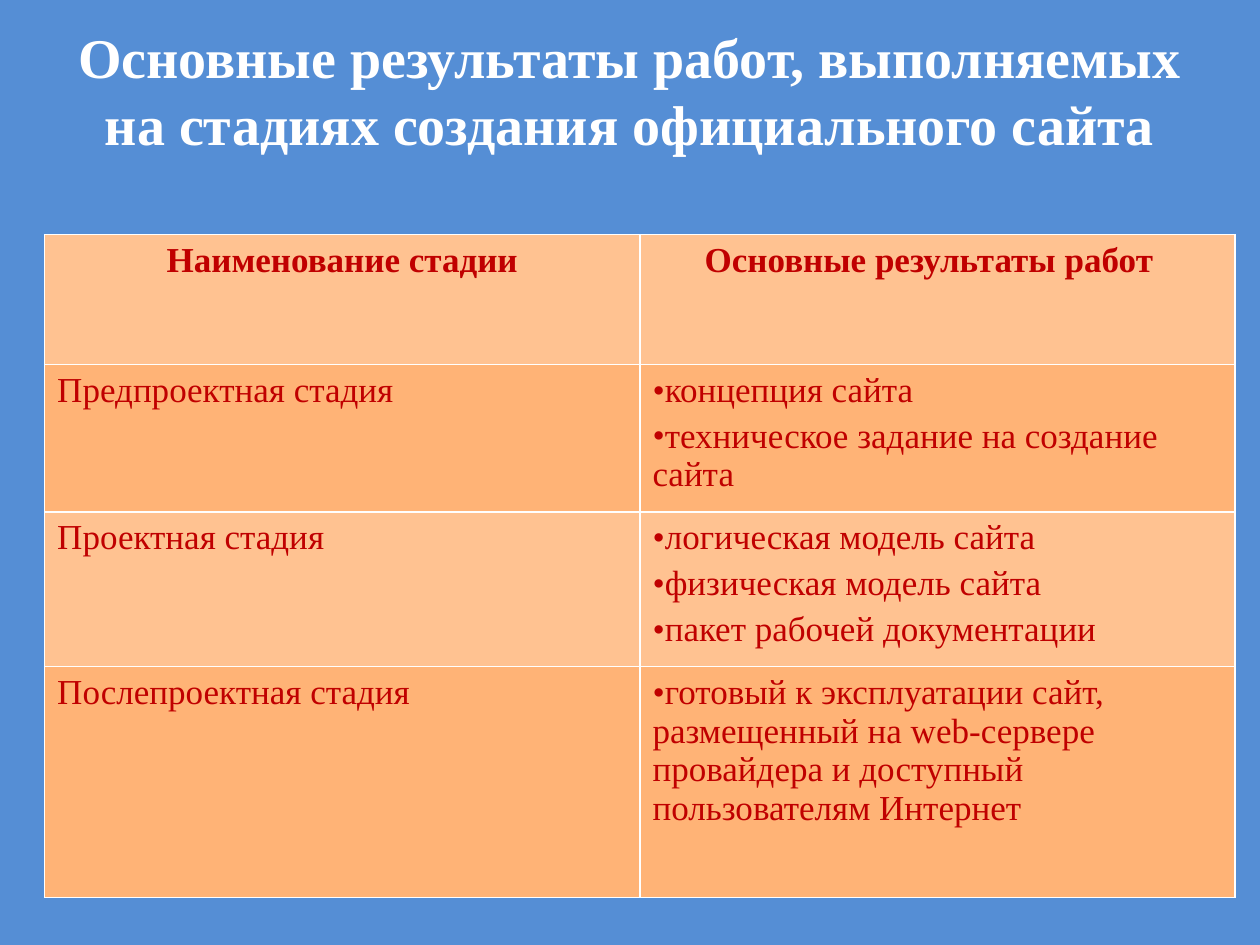
from lxml import etree
from pptx import Presentation
from pptx.dml.color import RGBColor
from pptx.enum.text import MSO_ANCHOR, MSO_AUTO_SIZE, PP_ALIGN
from pptx.oxml.ns import qn
from pptx.util import Cm, Pt

CENTER, LEFT = PP_ALIGN.CENTER, PP_ALIGN.LEFT
MIDDLE = MSO_ANCHOR.MIDDLE
NO_AUTOFIT = MSO_AUTO_SIZE.NONE
TITLE_ONLY = 5

# Content
TITLE = "Основные результаты работ, выполняемых на стадиях создания официального сайта"
HEADERS = ["Наименование стадии", "Основные результаты работ"]
STAGES = [
    ("Предпроектная стадия", [
        "концепция сайта",
        "техническое задание на создание сайта",
    ]),
    ("Проектная стадия", [
        "логическая модель сайта",
        "физическая модель сайта",
        "пакет рабочей документации",
    ]),
    ("Послепроектная стадия", [
        "готовый к эксплуатации сайт, размещенный на web-сервере "
        "провайдера и доступный пользователям Интернет",
    ]),
]

# Look and layout (lengths in cm)
FONT = "Times New Roman"
THEME = {
    "background": "558ED5",
    "bands": ("FFC291", "FFB376"),
    "border": "FFFFFF",
    "title": {"name": FONT, "size": Pt(32), "bold": True, "color": "FFFFFF"},
    "header": {"name": FONT, "size": Pt(20), "bold": True, "color": "C00000"},
    "body": {"name": FONT, "size": Pt(20), "bold": False, "color": "C00000"},
}
TITLE_BOX = {"left": 1.27, "top": 0.22, "width": 22.86, "height": 3.18}
TABLE_LEFT, TABLE_TOP = 0.9, 4.73
COLUMN_WIDTH = 12
ROW_HEIGHTS = [2.62, 2.97, 3.12, 4.65]
HEADER_RIGHT_MARGIN = 0.6


def write_paragraph(paragraph, text, style, alignment, space_before):
    paragraph.alignment = alignment
    paragraph.space_before = space_before
    run = paragraph.add_run()
    run.text = text
    for name, value in THEME[style].items():
        if name == "color":
            run.font.color.rgb = RGBColor.from_string(value)
        else:
            setattr(run.font, name, value)


def add_bullet(paragraph):
    properties = paragraph._p.get_or_add_pPr()
    properties.set("marL", "0")
    properties.set("indent", "0")
    etree.SubElement(properties, qn("a:buFont"), typeface=FONT)
    etree.SubElement(properties, qn("a:buChar"), char="•")


def add_borders(cell):
    properties = cell._tc.get_or_add_tcPr()
    for position, side in enumerate(("a:lnL", "a:lnR", "a:lnT", "a:lnB")):
        line = etree.Element(qn(side), w=str(Pt(1)))
        fill = etree.SubElement(line, qn("a:solidFill"))
        etree.SubElement(fill, qn("a:srgbClr"), val=THEME["border"])
        properties.insert(position, line)


def fill_cell(cell, lines, style, alignment, bulleted):
    frame = cell.text_frame
    for index, text in enumerate(lines):
        paragraph = frame.add_paragraph() if index else frame.paragraphs[0]
        write_paragraph(paragraph, text, style, alignment, Pt(4))
        if bulleted:
            add_bullet(paragraph)


def add_title(slide):
    title = slide.shapes.title
    for name, value in TITLE_BOX.items():
        setattr(title, name, Cm(value))
    frame = title.text_frame
    for name, value in {"word_wrap": True, "auto_size": NO_AUTOFIT,
                        "vertical_anchor": MIDDLE}.items():
        setattr(frame, name, value)
    write_paragraph(frame.paragraphs[0], TITLE, "title", CENTER, Pt(16))


def add_stage_table(slide):
    rows = [[[header] for header in HEADERS]]
    rows += [[[stage], results] for stage, results in STAGES]
    table = slide.shapes.add_table(
        len(rows), len(HEADERS), Cm(TABLE_LEFT), Cm(TABLE_TOP),
        Cm(COLUMN_WIDTH * len(HEADERS)), Cm(sum(ROW_HEIGHTS))).table
    table.first_row = table.horz_banding = False
    for column in table.columns:
        column.width = Cm(COLUMN_WIDTH)

    for row_index, row in enumerate(rows):
        table.rows[row_index].height = Cm(ROW_HEIGHTS[row_index])
        is_header = row_index == 0
        for column_index, lines in enumerate(row):
            cell = table.cell(row_index, column_index)
            cell.fill.solid()
            cell.fill.fore_color.rgb = RGBColor.from_string(THEME["bands"][row_index % 2])
            add_borders(cell)
            fill_cell(cell, lines, "header" if is_header else "body",
                      CENTER if is_header else LEFT,
                      bulleted=not is_header and column_index == 1)
    # The second heading sits slightly left of its column's centre
    table.cell(0, 1).margin_right = Cm(HEADER_RIGHT_MARGIN)


def main():
    presentation = Presentation()
    presentation.slide_width, presentation.slide_height = Cm(25.4), Cm(19.05)
    slide = presentation.slides.add_slide(presentation.slide_layouts[TITLE_ONLY])
    slide.background.fill.solid()
    slide.background.fill.fore_color.rgb = RGBColor.from_string(THEME["background"])
    add_title(slide)
    add_stage_table(slide)
    presentation.save("out.pptx")


if __name__ == "__main__":
    main()
